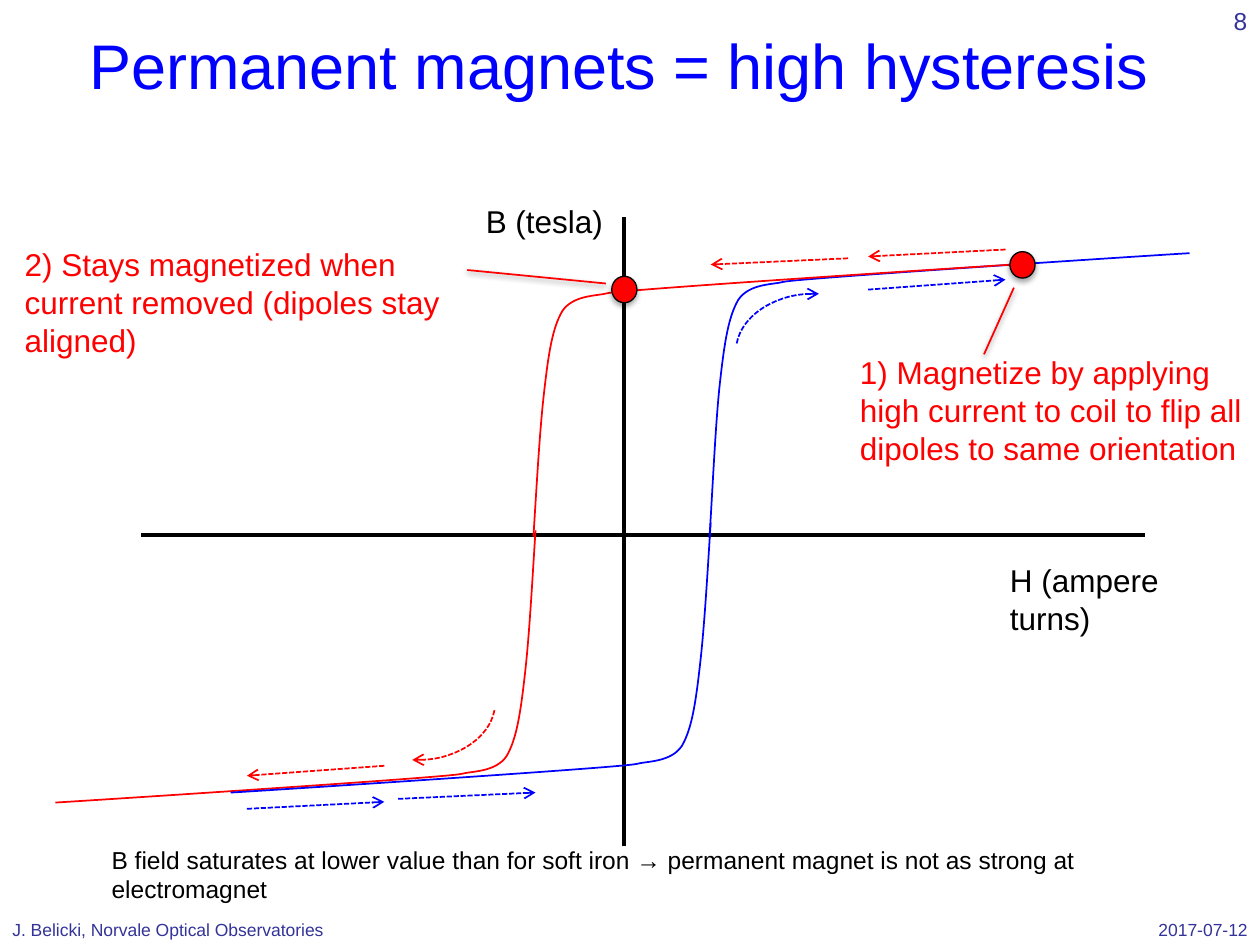
import pptx
import pptx.util
import pptx.dml.color
import pptx.enum.dml
import pptx.enum.shapes
import pptx.enum.text
import pptx.oxml.ns
from lxml import etree

Pt = pptx.util.Pt
RGB = pptx.dml.color.RGBColor
Kind = pptx.enum.shapes.MSO_SHAPE
Align = pptx.enum.text.PP_ALIGN
Anchor = pptx.enum.text.MSO_ANCHOR
qn = pptx.oxml.ns.qn

BLUE = RGB(0x00, 0x00, 0xFF)
RED = RGB(0xFF, 0x00, 0x00)
BLACK = RGB(0x00, 0x00, 0x00)
NAVY = RGB(0x33, 0x33, 0x99)

FONT = "Arial"
SPAN = 78.5  # width of a dashed arrow
WIDE = 274.3  # width of a half loop

# Bezier knots of a half loop, from its top right: (to the left, down)
BEND = [(0, 0), (2, 0), (225.5, 14.4), (232, 16.4), (238, 18), (251.5, 17.3),
        (257.8, 26.6), (263.5, 36.3), (265.7, 51), (268.2, 73), (270.7, 94.5)]


def effect(shape, alpha=0, gap=0):
    """Replace the theme shadow by none, or by a soft one straight below."""
    effects = etree.SubElement(shape.element.spPr, qn("a:effectLst"))
    if alpha:
        shadow = etree.SubElement(
            effects, qn("a:outerShdw"), blurRad=str(Pt(3.1)), dist=str(Pt(gap)),
            dir="5400000", rotWithShape="0")
        color = etree.SubElement(shadow, qn("a:srgbClr"), val=str(BLACK))
        etree.SubElement(color, qn("a:alpha"), val=str(alpha * 1000))


def stroke(shape, color, width=1, dashed=False):
    """Style the line; a dashed one ends in an arrowhead."""
    line = shape.line
    line.color.rgb = color
    line.width = Pt(width)
    if dashed:
        line.dash_style = pptx.enum.dml.MSO_LINE.SQUARE_DOT
        ln = shape.element.spPr.find(qn("a:ln"))
        ln.find(qn("a:prstDash")).set("val", "sysDash")
        etree.SubElement(ln, qn("a:tailEnd"), type="arrow")


def label(shapes, text, box, size, color, align=Align.LEFT, anchor=Anchor.TOP):
    shape = shapes.add_textbox(*map(Pt, box))
    frame = shape.text_frame
    frame.word_wrap = True
    frame.vertical_anchor = anchor
    para = frame.paragraphs[0]
    para.alignment = align
    run = para.add_run()
    run.text = text
    run.font.name = FONT
    run.font.size = Pt(size)
    run.font.color.rgb = color


def segment(shapes, ends, color, width=1, dashed=False, alpha=0):
    line = shapes.add_connector(
        pptx.enum.shapes.MSO_CONNECTOR.STRAIGHT, *map(Pt, ends))
    stroke(line, color, width, dashed)
    effect(line, alpha, 1.6)


def arrow(shapes, x, y, way, rise, color):
    """Dashed arrow from (x, y); way is 1 to the right, -1 to the left."""
    segment(shapes, (x, y, x + way * SPAN, y + rise), color, dashed=True)


def curve(shapes, left, top, drop, turn, color):
    """Half loop; a turn of 180 gives the lower half."""
    knots = [(Pt(WIDE - u), Pt(v))
             for u, v in BEND + [(272.4, drop - 30), (WIDE, drop)]]
    builder = shapes.build_freeform(*knots[0])
    builder.add_line_segments(knots[3::3], close=False)
    shape = builder.convert_to_shape(Pt(left), Pt(top))
    for i, part in enumerate(list(shape.element.spPr.iter(qn("a:lnTo")))):
        part.clear()
        bend = etree.Element(qn("a:cubicBezTo"))
        for x, y in knots[3 * i + 1:3 * i + 4]:
            etree.SubElement(bend, qn("a:pt"), x=str(x), y=str(y))
        part.getparent().replace(part, bend)
    shape.rotation = turn
    shape.fill.background()
    stroke(shape, color)
    effect(shape)


def arc(shapes, x, y, turn, color):
    shape = shapes.add_shape(Kind.ARC, Pt(x), Pt(y), Pt(90), Pt(66.2))
    shape.adjustments[0] = 3.564
    shape.adjustments[1] = 56.532
    shape.rotation = turn
    shape.fill.background()
    stroke(shape, color, dashed=True)
    effect(shape)


def dot(shapes, x, y):
    shape = shapes.add_shape(Kind.OVAL, Pt(x), Pt(y), Pt(14.4), Pt(15.1))
    shape.fill.solid()
    shape.fill.fore_color.rgb = RED
    stroke(shape, BLACK, 0.75)
    effect(shape, 35, 1.8)


def callout(shapes, text, box, ends):
    """Red note grouped with the line to its dot."""
    group = shapes.add_group_shape().shapes
    label(group, text, box, 18, RED)
    segment(group, ends, RED, alpha=38)


def main():
    deck = pptx.Presentation()
    deck.slide_width, deck.slide_height = Pt(720), Pt(540)
    shapes = deck.slides.add_slide(deck.slide_layouts[6]).shapes

    label(shapes, "Permanent magnets = high hysteresis", (43.9, -8.2, 648, 90),
          36, BLUE, anchor=Anchor.MIDDLE)
    label(shapes, "2017-07-12", (559.4, 521.6, 160.6, 18), 10, NAVY, Align.RIGHT)
    label(shapes, "J. Belicki, Norvale Optical Observatories",
          (0, 521.6, 228.2, 18), 10, NAVY)
    label(shapes, "8", (570, 0, 149.8, 30.2), 14, NAVY, Align.RIGHT)

    segment(shapes, (80.6, 305.8, 654.5, 305.8), BLACK, 2)
    segment(shapes, (356.7, 483.6, 356.7, 123.8), BLACK, 2)
    label(shapes, "H (ampere turns)", (570, 317, 149.8, 28.8), 18, BLACK)
    curve(shapes, 405.4, 144.7, 162.7, 0, BLUE)
    label(shapes, "B (tesla)", (270.5, 111.9, 149.8, 28.8), 18, BLACK)
    curve(shapes, 31.7, 303.1, 155.5, 180, RED)
    curve(shapes, 131.8, 298.8, 154.1, 180, BLUE)
    label(shapes, "B field saturates at lower value than for soft iron → "
          "permanent magnet is not as strong at electromagnet",
          (56.7, 479.2, 648, 24.5), 14, BLACK)

    arrow(shapes, 227.5, 456.5, 1, -3.6, BLUE)
    arrow(shapes, 484.6, 147.6, -1, 3.6, RED)
    arc(shapes, 193, 368.1, 0, RED)
    arc(shapes, 420.5, 167.8, 180, BLUE)
    arrow(shapes, 141.1, 462.2, 1, -4, BLUE)
    arrow(shapes, 574.6, 142.6, -1, 4, RED)
    arrow(shapes, 219.6, 437.6, -1, 5.7, RED)
    arrow(shapes, 496.1, 165.5, 1, -5.7, BLUE)

    curve(shapes, 304.8, 151.2, 155.5, 0, RED)
    dot(shapes, 577.1, 143.8)
    dot(shapes, 349.6, 157.9)
    callout(shapes, "1) Magnetize by applying high current to coil to flip all "
            "dipoles to same orientation",
            (484.3, 198.2, 235.4, 72.7), (562.3, 202.5, 579.4, 164.4))
    callout(shapes, "2) Stays magnetized when current removed "
            "(dipoles stay aligned)",
            (7, 136.6, 281.5, 51.1), (267, 154.3, 346.2, 162))
    deck.save("out.pptx")


if __name__ == "__main__":
    main()
